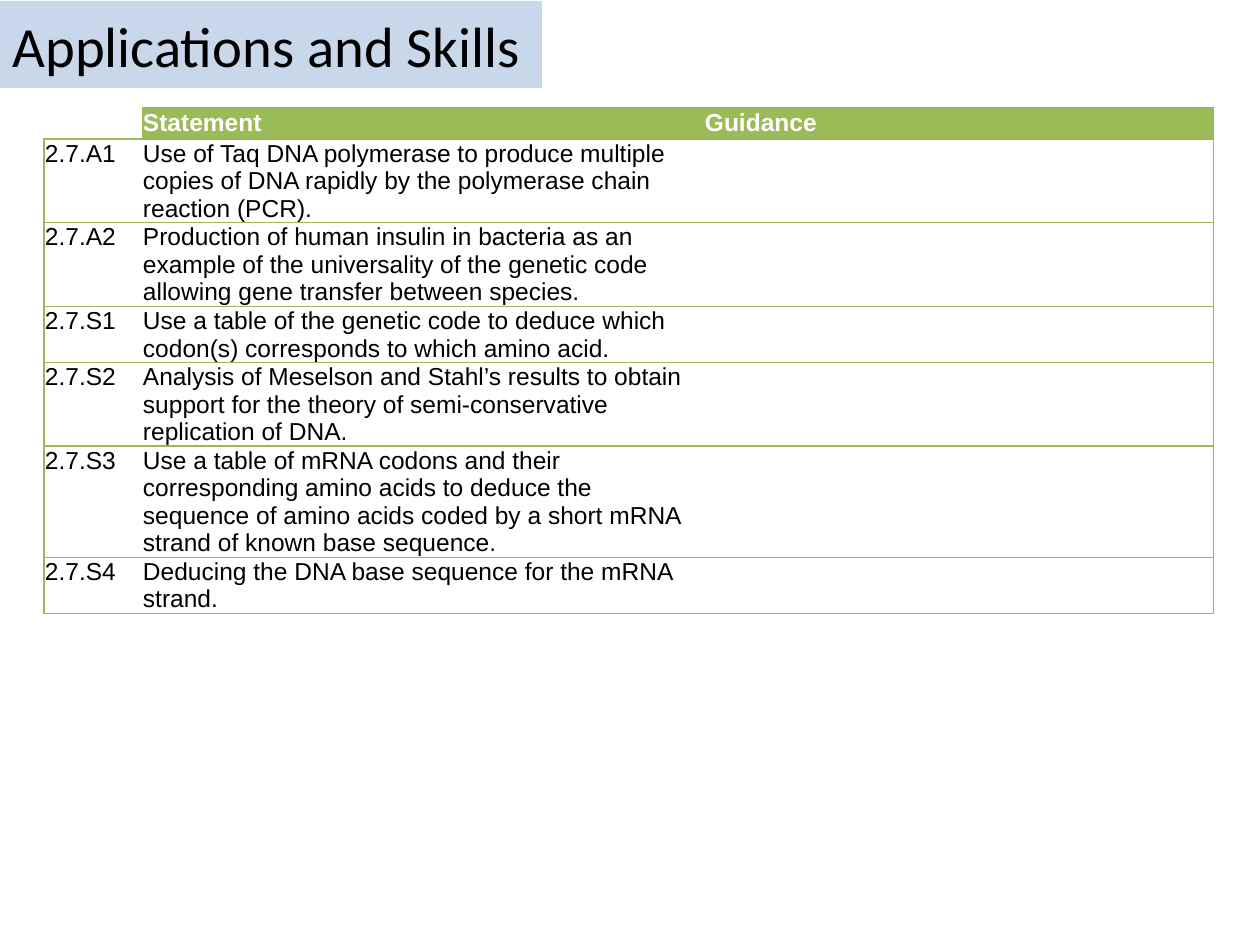
from lxml.etree import SubElement
from pptx import Presentation
from pptx.dml.color import RGBColor
from pptx.enum.text import MSO_ANCHOR, MSO_AUTO_SIZE, PP_ALIGN
from pptx.oxml.ns import qn
from pptx.util import Pt

EMU_PER_PX = 914400 / 126
NO_GRID_STYLE = "{2D5ABB26-0587-4C30-8999-92F81FD0307C}"
GREEN, BORDER, WHITE, BLACK = "9BBB59", "98B955", "FFFFFF", "000000"
COLUMN_WIDTHS = [98, 562, 510]
ROW_HEIGHT = 31
CELL_INSETS = {"margin_left": 1, "margin_top": 1, "margin_right": 1, "margin_bottom": 0}
ROWS = [
    ("", "Statement", "Guidance"),
    ("2.7.A1", "Use of Taq DNA polymerase to produce multiple copies of DNA rapidly "
               "by the polymerase chain reaction (PCR).", ""),
    ("2.7.A2", "Production of human insulin in bacteria as an example of the universality "
               "of the genetic code allowing gene transfer between species.", ""),
    ("2.7.S1", "Use a table of the genetic code to deduce which codon(s) corresponds "
               "to which amino acid.", ""),
    ("2.7.S2", "Analysis of Meselson and Stahl’s results to obtain support for the theory "
               "of semi-conservative replication of DNA.", ""),
    ("2.7.S3", "Use a table of mRNA codons and their corresponding amino acids to deduce "
               "the sequence of amino acids coded by a short mRNA strand of known base "
               "sequence.", ""),
    ("2.7.S4", "Deducing the DNA base sequence for the mRNA strand.", ""),
]


def px(length):
    return round(length * EMU_PER_PX)


def color(hex_value):
    return RGBColor.from_string(hex_value)


def apply(target, values):
    for name, value in values.items():
        setattr(target, name, value)


def paint(fill, hex_value):
    fill.solid()
    fill.fore_color.rgb = color(hex_value)


def write(paragraph, text, size, face, hex_value, bold=False):
    run = paragraph.add_run()
    run.text = text
    apply(run.font, {"size": Pt(size), "name": face, "bold": bold})
    run.font.color.rgb = color(hex_value)


def add_heading(slide, text):
    heading = slide.shapes.title
    apply(heading, {"left": 0, "top": px(1), "width": px(542), "height": px(87)})
    paint(heading.fill, "B9CDE5")
    tint = heading.fill._xPr.find(qn("a:solidFill"))[0]
    SubElement(tint, qn("a:alpha"), val="78000")
    frame = heading.text_frame
    apply(frame, {"word_wrap": True, "auto_size": MSO_AUTO_SIZE.NONE,
                  "vertical_anchor": MSO_ANCHOR.MIDDLE})
    frame.paragraphs[0].alignment = PP_ALIGN.LEFT
    write(frame.paragraphs[0], text, 32.4, "Calibri", BLACK)


def add_borders(cell, sides):
    properties = cell._tc.get_or_add_tcPr()
    for side in sides:
        line = SubElement(properties, qn(f"a:ln{side}"), w=str(Pt(0.75)))
        SubElement(SubElement(line, qn("a:solidFill")), qn("a:srgbClr"), val=BORDER)


def border_sides(row, column):
    in_header = row == 0
    if in_header and column == 0:
        return "B"
    left = "L" if column == 0 else ""
    right = "R" if column == len(COLUMN_WIDTHS) - 1 else ""
    return left + right + "TB"


def fill_cell(cell, text, row, column):
    apply(cell, {name: px(inset) for name, inset in CELL_INSETS.items()})
    add_borders(cell, border_sides(row, column))
    in_header = row == 0
    if not in_header:
        paint(cell.fill, WHITE)
    elif text:
        paint(cell.fill, GREEN)
    paragraph = cell.text_frame.paragraphs[0]
    if text:
        write(paragraph, text, 14, "Arial", WHITE if in_header else BLACK, in_header)
    else:
        SubElement(paragraph._p, qn("a:endParaRPr"), sz="1400")


def add_statements(slide):
    frame = slide.shapes.add_table(len(ROWS), len(COLUMN_WIDTHS), px(44), px(108),
                                   px(sum(COLUMN_WIDTHS)), px(ROW_HEIGHT * len(ROWS)))
    table = frame.table
    table._tbl.tblPr.find(qn("a:tableStyleId")).text = NO_GRID_STYLE
    table.horz_banding = False
    for column, width in zip(table.columns, COLUMN_WIDTHS):
        column.width = px(width)
    for row, texts in enumerate(ROWS):
        table.rows[row].height = px(ROW_HEIGHT)
        for column, text in enumerate(texts):
            fill_cell(table.cell(row, column), text, row, column)


def main():
    deck = Presentation()
    apply(deck, {"slide_width": px(1260), "slide_height": px(945)})
    slide = deck.slides.add_slide(deck.slide_layouts[5])
    add_heading(slide, "Applications and Skills")
    add_statements(slide)
    deck.save("out.pptx")


if __name__ == "__main__":
    main()
